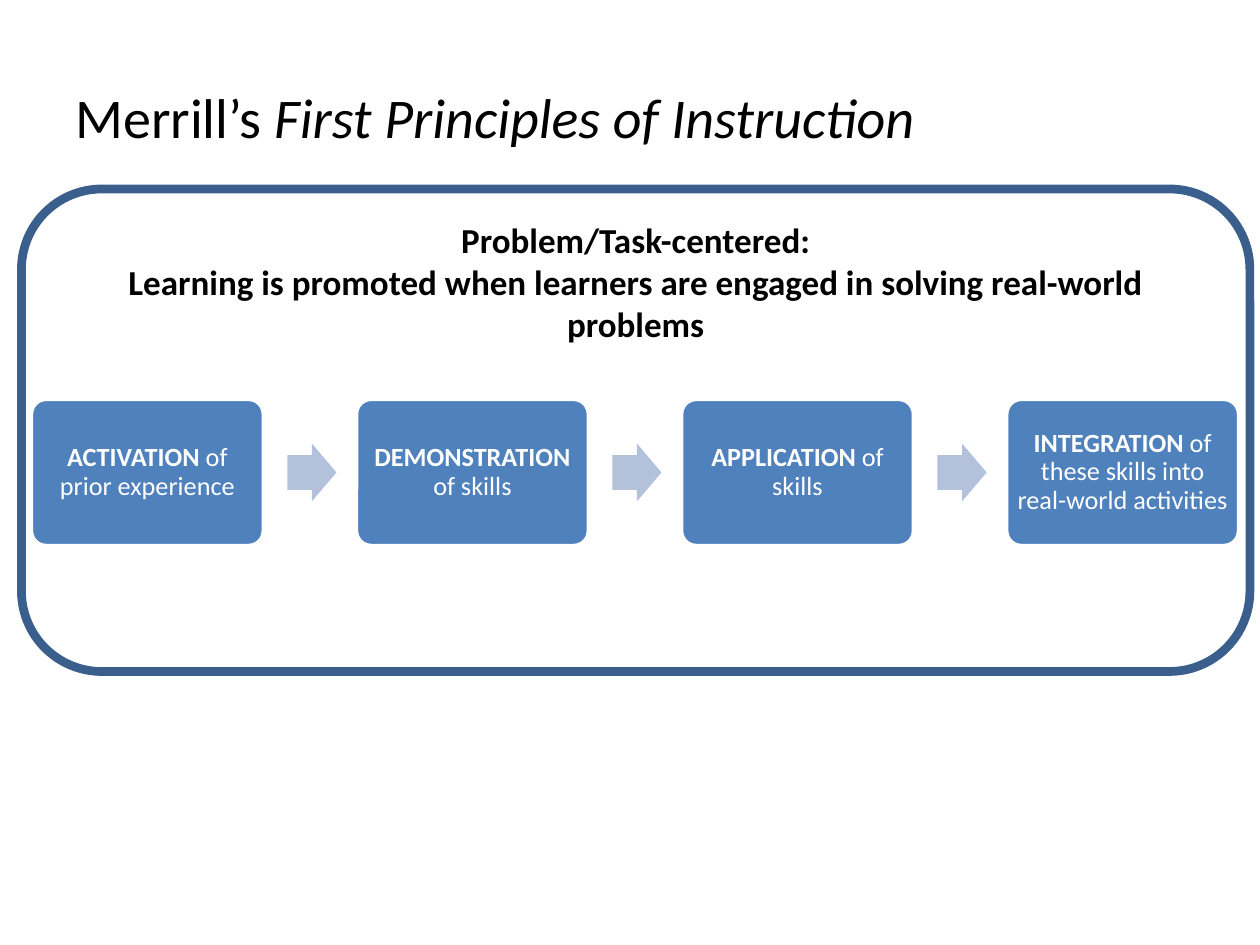
from pptx import Presentation
from pptx.dml.color import RGBColor
from pptx.enum.shapes import MSO_SHAPE
from pptx.enum.text import MSO_ANCHOR, PP_ALIGN
from pptx.util import Inches, Pt

COLORS = {"text": "000000", "white": "FFFFFF", "step": "4F81BD",
          "arrow": "B3C1DB", "frame": "3A5F8C"}
STEPS = [
    ("ACTIVATION", " of prior experience"),
    ("DEMONSTRATION", " of skills"),
    ("APPLICATION", " of skills"),
    ("INTEGRATION", " of these skills into real-world activities"),
]
LEFT, PITCH = 0.25, 2.58


def color(name):
    return RGBColor.from_string(COLORS[name])


def style(para, size, tone, align=PP_ALIGN.CENTER):
    para.alignment = align
    para.font.name = "Calibri"
    para.font.size = Pt(size)
    para.font.color.rgb = color(tone)


def add_run(para, text):
    run = para.add_run()
    run.text = text
    return run


def add_box(slide, kind, box, fill=None, line=None, width=0):
    """Add a preset shape without shadow; no fill or line unless named."""
    shape = slide.shapes.add_shape(kind, *map(Inches, box))
    shape.shadow.inherit = False
    if fill:
        shape.fill.solid()
        shape.fill.fore_color.rgb = color(fill)
    else:
        shape.fill.background()
    if line:
        shape.line.color.rgb = color(line)
        shape.line.width = Pt(width)
    else:
        shape.line.fill.background()
    return shape


def add_title(slide):
    frame = slide.shapes.add_textbox(
        *map(Inches, (0.5, 0.3, 9, 1.25))).text_frame
    frame.word_wrap = True
    frame.vertical_anchor = MSO_ANCHOR.MIDDLE
    para = frame.paragraphs[0]
    style(para, 32, "text", PP_ALIGN.LEFT)
    add_run(para, "Merrill’s ")
    add_run(para, "First Principles of Instruction").font.italic = True


def add_step(slide, left, name, rest):
    shape = add_box(slide, MSO_SHAPE.ROUNDED_RECTANGLE,
                    (left, 3.17, 1.84, 1.16), "step", "white", 2)
    shape.adjustments[0] = 0.1
    frame = shape.text_frame
    frame.word_wrap = True
    frame.vertical_anchor = MSO_ANCHOR.MIDDLE
    frame.margin_left = frame.margin_right = Inches(0.03)
    frame.margin_top = frame.margin_bottom = Inches(0.03)
    para = frame.paragraphs[0]
    style(para, 15, "white")
    para.line_spacing = 0.9
    add_run(para, name).font.bold = True
    add_run(para, rest)


def add_arrow(slide, left):
    shape = add_box(slide, MSO_SHAPE.RIGHT_ARROW,
                    (left, 3.52, 0.39, 0.46), "arrow")
    shape.adjustments[0] = 0.6


def add_frame(slide):
    shape = add_box(slide, MSO_SHAPE.ROUNDED_RECTANGLE,
                    (0.17, 1.5, 9.75, 3.83), line="frame", width=5)
    frame = shape.text_frame
    frame.word_wrap = True
    frame.vertical_anchor = MSO_ANCHOR.TOP
    frame.text = ("Problem/Task-centered:\nLearning is promoted when learners "
                  "are engaged in solving real-world problems")
    for para in frame.paragraphs:
        style(para, 20, "text")
        para.font.bold = True


def main():
    deck = Presentation()
    deck.slide_width, deck.slide_height = Inches(10), Inches(7.5)
    slide = deck.slides.add_slide(deck.slide_layouts[6])
    add_title(slide)
    for i, (name, rest) in enumerate(STEPS):
        left = LEFT + i * PITCH
        add_step(slide, left, name, rest)
        if i < len(STEPS) - 1:
            add_arrow(slide, left + 2.03)
    add_frame(slide)
    deck.save("out.pptx")


if __name__ == "__main__":
    main()
